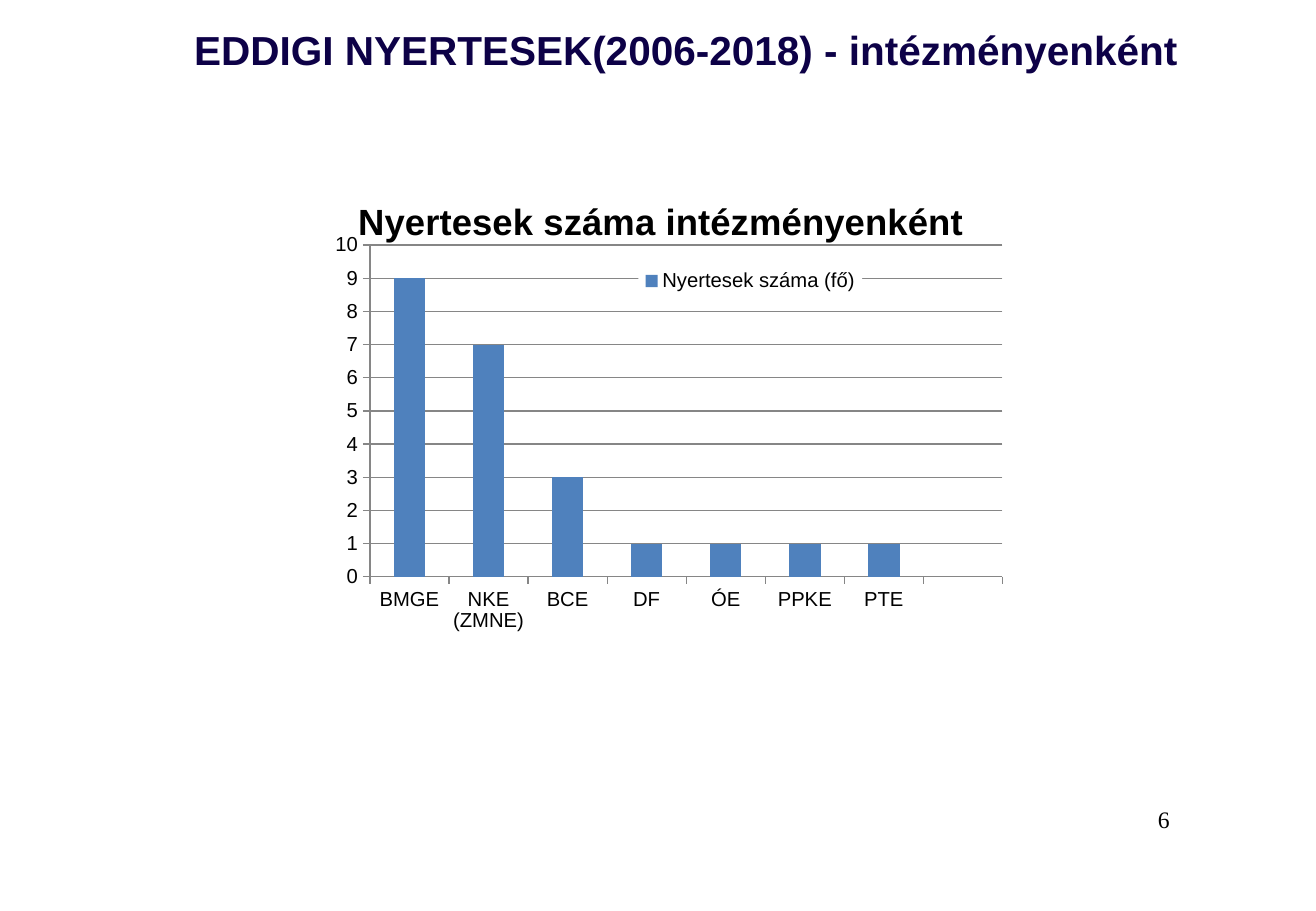
import pptx
import pptx.chart.data
import pptx.dml.color
import pptx.enum.chart
import pptx.enum.text
import pptx.oxml
import pptx.oxml.ns
import pptx.util
from pptx.util import Inches

WINNERS = {"BMGE": 9, "NKE (ZMNE)": 7, "BCE": 3, "DF": 1, "ÓE": 1,
           "PPKE": 1, "PTE": 1, "": None}


def rgb(value):
    return pptx.dml.color.RGBColor.from_string(value)


def style_font(font, size, color="000000", name="Arial", bold=False):
    font.size = pptx.util.Pt(size)
    font.name = name
    font.bold = bold
    font.color.rgb = rgb(color)


def add_text(slide, text, left, top, width, height, anchor, **style):
    box = slide.shapes.add_textbox(Inches(left), Inches(top), Inches(width), Inches(height))
    frame = box.text_frame
    frame.word_wrap = True
    frame.vertical_anchor = anchor
    frame.text = text
    style_font(frame.paragraphs[0].runs[0].font, **style)


def make_layout(x, y, w=None, h=None, inner=False):
    values = {"xMode": "edge", "yMode": "edge", "x": x, "y": y, "w": w, "h": h}
    if inner:
        values = {"layoutTarget": "inner", **values}
    parts = "".join(f'<c:{tag} val="{value}"/>' for tag, value in values.items()
                    if value is not None)
    return pptx.oxml.parse_xml(
        f'<c:layout {pptx.oxml.ns.nsdecls("c")}>'
        f"<c:manualLayout>{parts}</c:manualLayout></c:layout>")


def place(element, layout, before):
    for old in element.findall(pptx.oxml.ns.qn("c:layout")):
        element.remove(old)
    follower = next(child for child in element
                    if child.tag in [pptx.oxml.ns.qn(tag) for tag in before])
    follower.addprevious(layout)


def style_line(line, color="868686"):
    line.color.rgb = rgb(color)
    line.width = pptx.util.Pt(0.75)


def style_axis(axis):
    axis.major_tick_mark = pptx.enum.chart.XL_TICK_MARK.OUTSIDE
    axis.minor_tick_mark = pptx.enum.chart.XL_TICK_MARK.NONE
    style_font(axis.tick_labels.font, 12)
    style_line(axis.format.line)


def add_winners_chart(slide):
    data = pptx.chart.data.CategoryChartData()
    data.categories = list(WINNERS)
    data.add_series("Nyertesek száma (fő)", list(WINNERS.values()))
    chart = slide.shapes.add_chart(
        pptx.enum.chart.XL_CHART_TYPE.COLUMN_CLUSTERED,
        Inches(1.81), Inches(1.34), Inches(7.22), Inches(4.81), data).chart
    style_font(chart.font, 18)

    title = chart.chart_title
    title.text_frame.text = "Nyertesek száma intézményenként"
    style_font(title.text_frame.paragraphs[0].runs[0].font, 21.6, bold=True)
    title.include_in_layout = False
    place(title._element, make_layout(0.15, 0.05), ["c:overlay"])

    plot = chart.plots[0]
    plot.gap_width = 150
    plot.vary_by_categories = False
    winners = plot.series[0]
    winners.format.fill.solid()
    winners.format.fill.fore_color.rgb = rgb("4F81BD")
    plot_area = plot._element.getparent()
    place(plot_area, make_layout(0.171, 0.141, 0.721, 0.568, inner=True), ["c:barChart"])

    style_axis(chart.category_axis)
    count_axis = chart.value_axis
    style_axis(count_axis)
    count_axis.minimum_scale = 0
    count_axis.maximum_scale = 10
    count_axis.major_unit = 1
    count_axis.has_major_gridlines = True
    style_line(count_axis.major_gridlines.format.line)

    chart.has_legend = True
    legend = chart.legend
    legend.position = pptx.enum.chart.XL_LEGEND_POSITION.RIGHT
    legend.include_in_layout = False
    style_font(legend.font, 12)
    fill = pptx.oxml.parse_xml(
        f'<c:spPr {pptx.oxml.ns.nsdecls("c", "a")}><a:solidFill>'
        '<a:srgbClr val="FFFFFF"/></a:solidFill></c:spPr>')
    place(legend._element, make_layout(0.477, 0.175, 0.255, 0.055), ["c:overlay"])
    legend._element.find(pptx.oxml.ns.qn("c:txPr")).addprevious(fill)


def main():
    deck = pptx.Presentation()
    deck.slide_width = Inches(10.83)
    deck.slide_height = Inches(7.5)
    slide = deck.slides.add_slide(deck.slide_layouts[6])
    anchors = pptx.enum.text.MSO_ANCHOR
    add_text(slide, "6", 9.43, 6.58, 0.77, 0.54, anchors.TOP,
             size=14, name="Times New Roman")
    add_text(slide, "EDDIGI NYERTESEK(2006-2018) - intézményenként",
             1.5, 0.07, 8.66, 0.67, anchors.MIDDLE, size=24, color="0D0147", bold=True)
    add_winners_chart(slide)
    deck.save("out.pptx")


if __name__ == "__main__":
    main()
